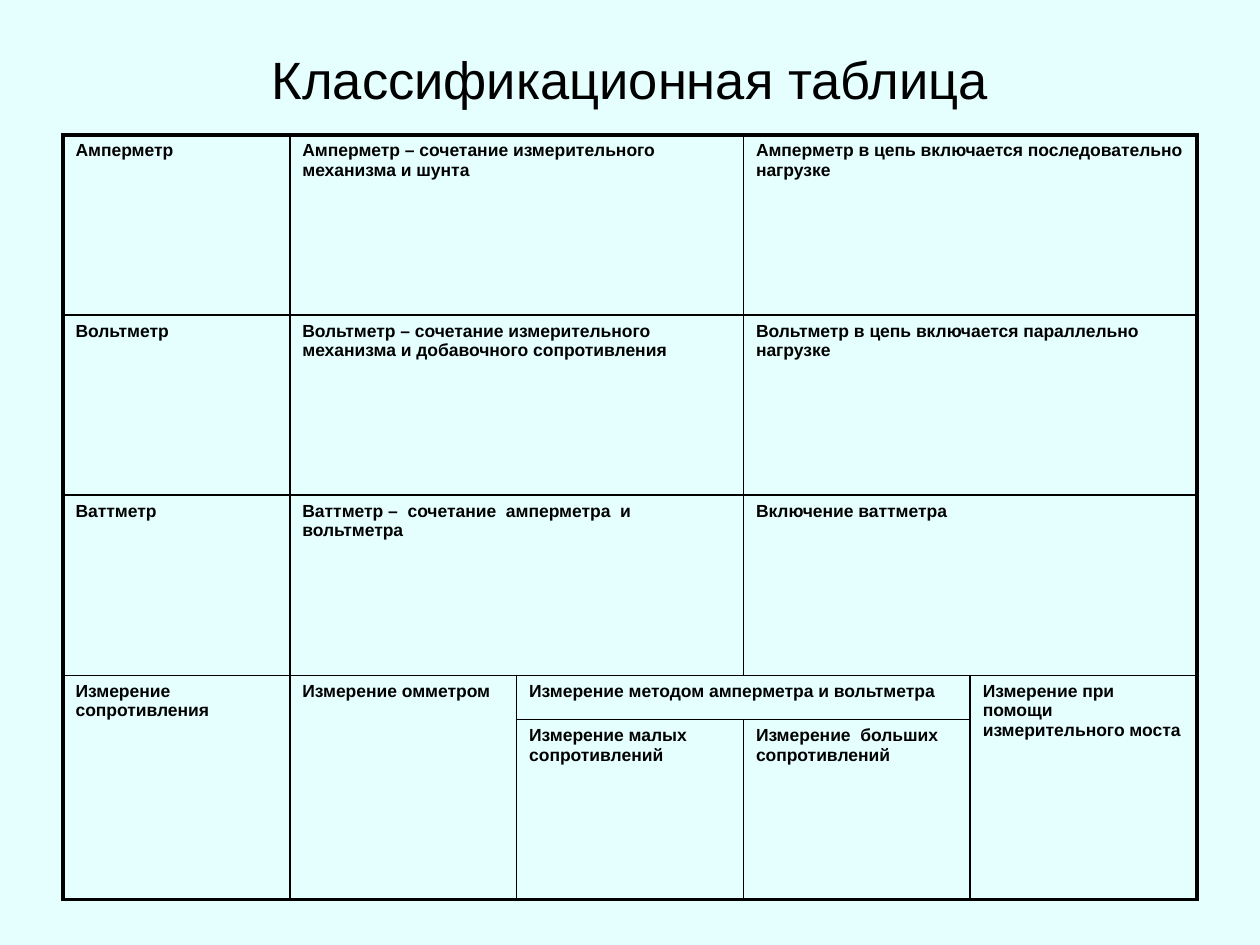
"""Build a slide with a classification table of electrical measuring instruments."""
from lxml import etree
from pptx import Presentation
from pptx.dml.color import RGBColor
from pptx.enum.text import MSO_ANCHOR, PP_ALIGN
from pptx.oxml.ns import qn
from pptx.util import Inches, Pt

MIDDLE = MSO_ANCHOR.MIDDLE
CENTER = PP_ALIGN.CENTER
FONT = "Arial"
COLORS = {"background": "E5FFFF", "ink": "000000"}
ROW_HEIGHTS = [1.43, 1.43, 1.43, 0.35, 1.43]
COL_WIDTH = 1.8
N_ROWS, N_COLS = len(ROW_HEIGHTS), 5
INNER, OUTER = 1, 2.25

BLOCKS = [
    (0, 0, 1, 1, "Амперметр"),
    (0, 1, 1, 2, "Амперметр – сочетание измерительного механизма и шунта"),
    (0, 3, 1, 2, "Амперметр в цепь включается последовательно нагрузке"),
    (1, 0, 1, 1, "Вольтметр"),
    (1, 1, 1, 2, "Вольтметр – сочетание измерительного механизма и добавочного сопротивления"),
    (1, 3, 1, 2, "Вольтметр в цепь включается параллельно  нагрузке"),
    (2, 0, 1, 1, "Ваттметр"),
    (2, 1, 1, 2, "Ваттметр –  сочетание  амперметра  и вольтметра"),
    (2, 3, 1, 2, "Включение ваттметра"),
    (3, 0, 2, 1, "Измерение сопротивления"),
    (3, 1, 2, 1, "Измерение омметром"),
    (3, 2, 1, 2, "Измерение методом амперметра и вольтметра"),
    (3, 4, 2, 1, "Измерение при помощи измерительного моста"),
    (4, 2, 1, 1, "Измерение малых сопротивлений"),
    (4, 3, 1, 1, "Измерение  больших сопротивлений"),
]


def set_font(p, size, bold):
    p.font.name = FONT
    p.font.size = Pt(size)
    p.font.bold = bold
    p.font.color.rgb = RGBColor.from_string(COLORS["ink"])


def set_borders(cell, widths):
    tcPr = cell._tc.get_or_add_tcPr()
    for i, (side, width) in enumerate(widths.items()):
        ln = etree.Element(qn(f"a:ln{side}"), w=str(Pt(width)))
        if width:
            fill = etree.SubElement(ln, qn("a:solidFill"))
            etree.SubElement(fill, qn("a:srgbClr"), val=COLORS["ink"])
        else:
            etree.SubElement(ln, qn("a:noFill"))
        tcPr.insert(i, ln)


prs = Presentation()
prs.slide_width, prs.slide_height = Inches(10), Inches(7.5)
s = prs.slides.add_slide(prs.slide_layouts[5])
s.background.fill.solid()
s.background.fill.fore_color.rgb = RGBColor.from_string(COLORS["background"])

title = s.shapes.title
title.left, title.top, title.width, title.height = Inches(0.5), Inches(0.3), Inches(9), Inches(0.64)
tf = title.text_frame
tf.text = "Классификационная таблица"
tf.vertical_anchor = MIDDLE
tf.paragraphs[0].alignment = CENTER
set_font(tf.paragraphs[0], 30, False)

table = s.shapes.add_table(N_ROWS, N_COLS, Inches(0.5), Inches(1.07),
                           Inches(N_COLS * COL_WIDTH), Inches(sum(ROW_HEIGHTS))).table
table.first_row = table.horz_banding = False
for row, height in zip(table.rows, ROW_HEIGHTS):
    row.height = Inches(height)
for col in table.columns:
    col.width = Inches(COL_WIDTH)

for top, left, n_rows, n_cols, text in BLOCKS:
    bottom, right = top + n_rows - 1, left + n_cols - 1
    origin = table.cell(top, left)
    if n_rows * n_cols > 1:
        origin.merge(table.cell(bottom, right))
    origin.text = text
    set_font(origin.text_frame.paragraphs[0], 10, True)
    outline = {
        "L": INNER if left else OUTER,
        "R": INNER if right < N_COLS - 1 else OUTER,
        "T": INNER if top else OUTER,
        "B": INNER if bottom < N_ROWS - 1 else OUTER,
    }
    for r in range(top, bottom + 1):
        for c in range(left, right + 1):
            cell = table.cell(r, c)
            cell.fill.background()
            on_edge = {"L": c == left, "R": c == right, "T": r == top, "B": r == bottom}
            is_origin = (r, c) == (top, left)
            set_borders(cell, {side: width if is_origin or on_edge[side] else 0
                               for side, width in outline.items()})

prs.save("out.pptx")
